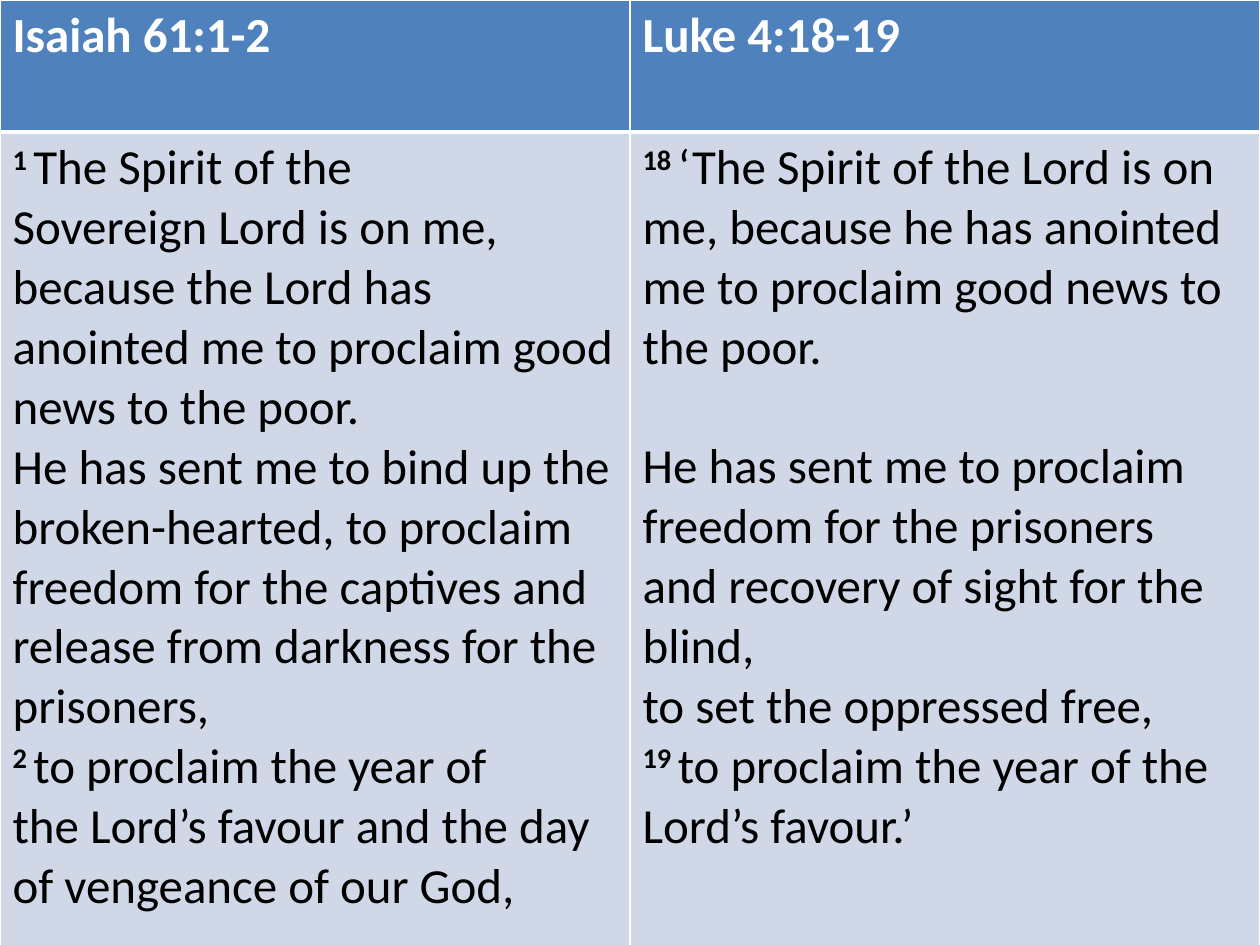
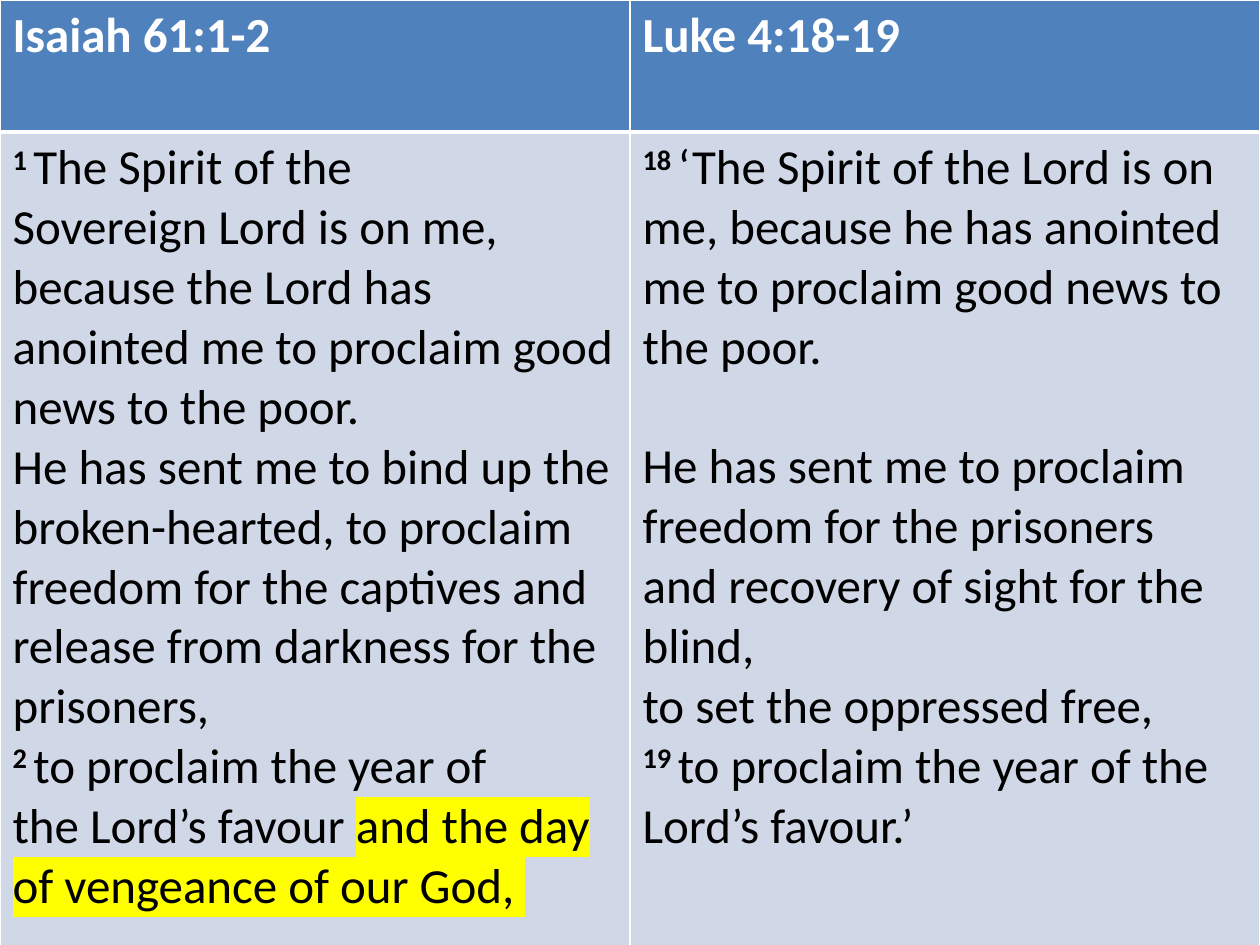
"""Build two slides comparing Isaiah 61:1-2 with Luke 4:18-19."""
from collections import namedtuple
from dataclasses import dataclass

from lxml.etree import SubElement
from pptx import Presentation
from pptx.dml.color import RGBColor as RGB
from pptx.oxml.ns import qn
from pptx.util import Pt

EMU_PER_PX = 914400 / 126
SLIDE_W, SLIDE_H = 1260, 945
HEADER_H, BODY_H = 132, 834
BLANK_LAYOUT = 6


@dataclass(frozen=True)
class Theme:
    font: str = "Calibri"
    size: int = 28
    blank_line: int = 34
    superscript: int = 30000
    thin: int = 1
    thick: int = 3
    header_fill: str = "4F81BD"
    body_fill: str = "D0D8E8"
    header_text: str = "FFFFFF"
    body_text: str = "000000"
    border: str = "FFFFFF"
    highlight: str = "FFFF00"


THEME = Theme()
Span = namedtuple("Span", "text verse marked", defaults=(False, False))

HEADERS = ["Isaiah 61:1-2", "Luke 4:18-19"]

# A tilde ties two words together with a no-break space.
ISAIAH = [[
    Span("1~", verse=True),
    Span("The Spirit of the Sovereign~Lord~is on me, because the~Lord~has "
         "anointed me to proclaim good news to the poor.\n"
         "He has sent me to bind up the broken-hearted, to proclaim freedom "
         "for the captives and release from darkness for the prisoners, \n"),
    Span("2~", verse=True),
    Span("to proclaim the year of the~Lord’s favour "),
    Span("and the day of vengeance of our God, ", marked=True),
]]
LUKE = [
    [
        Span("18~", verse=True),
        Span("‘The Spirit of the Lord is on me, because he has anointed me "
             "to proclaim good news to the poor."),
    ],
    [
        Span("He has sent me to proclaim freedom for the prisoners\n"
             "and recovery of sight for the blind,\n"
             "to set the oppressed free,\n"),
        Span("19~", verse=True),
        Span("to proclaim the year of the Lord’s favour.’"),
    ],
]


def px(n):
    return round(n * EMU_PER_PX)


def add_color(parent, tag, color):
    SubElement(SubElement(parent, qn(tag)), qn("a:srgbClr"), val=color)


def style_run(r, color, bold, superscript=False, highlight=False):
    rPr = r._r.get_or_add_rPr()
    r.font.size = Pt(THEME.size)
    r.font.bold = bold
    r.font.color.rgb = RGB.from_string(color)
    if superscript:
        rPr.set("baseline", str(THEME.superscript))
    if highlight:
        add_color(rPr, "a:highlight", THEME.highlight)
    r.font.name = THEME.font


def style_cell(cell, fill, top, bottom):
    tcPr = cell._tc.get_or_add_tcPr()
    widths = {"L": THEME.thin, "R": THEME.thin, "T": top, "B": bottom}
    for side, width in widths.items():
        ln = SubElement(tcPr, qn(f"a:ln{side}"), w=str(Pt(width)))
        add_color(ln, "a:solidFill", THEME.border)
    cell.fill.solid()
    cell.fill.fore_color.rgb = RGB.from_string(fill)


def fill_header(cell, title):
    style_cell(cell, THEME.header_fill, THEME.thin, THEME.thick)
    cell.text_frame.text = title
    style_run(cell.text_frame.paragraphs[0].runs[0], THEME.header_text, True)


def add_span(p, span, highlight):
    for i, line in enumerate(span.text.replace("~", chr(160)).split("\n")):
        if i:
            p.add_line_break()
        if line:
            r = p.add_run()
            r.text = line
            style_run(r, THEME.body_text, span.verse, span.verse,
                      highlight and span.marked)


def fill_passage(cell, passage, highlight):
    style_cell(cell, THEME.body_fill, THEME.thick, THEME.thin)
    tf = cell.text_frame
    for i, spans in enumerate(passage):
        p = tf.add_paragraph() if i else tf.paragraphs[0]
        if i:
            p.space_before = Pt(THEME.blank_line)
        for span in spans:
            add_span(p, span, highlight)


def add_comparison(prs, highlight):
    s = prs.slides.add_slide(prs.slide_layouts[BLANK_LAYOUT])
    table = s.shapes.add_table(2, len(HEADERS), 0, 0, px(SLIDE_W),
                               px(HEADER_H + BODY_H)).table
    table.horz_banding = False
    table.rows[0].height, table.rows[1].height = px(HEADER_H), px(BODY_H)
    for col, (title, passage) in enumerate(zip(HEADERS, [ISAIAH, LUKE])):
        fill_header(table.cell(0, col), title)
        fill_passage(table.cell(1, col), passage, highlight)


def main():
    prs = Presentation()
    prs.slide_width, prs.slide_height = px(SLIDE_W), px(SLIDE_H)
    for highlight in (False, True):
        add_comparison(prs, highlight)
    prs.save("out.pptx")


if __name__ == "__main__":
    main()
